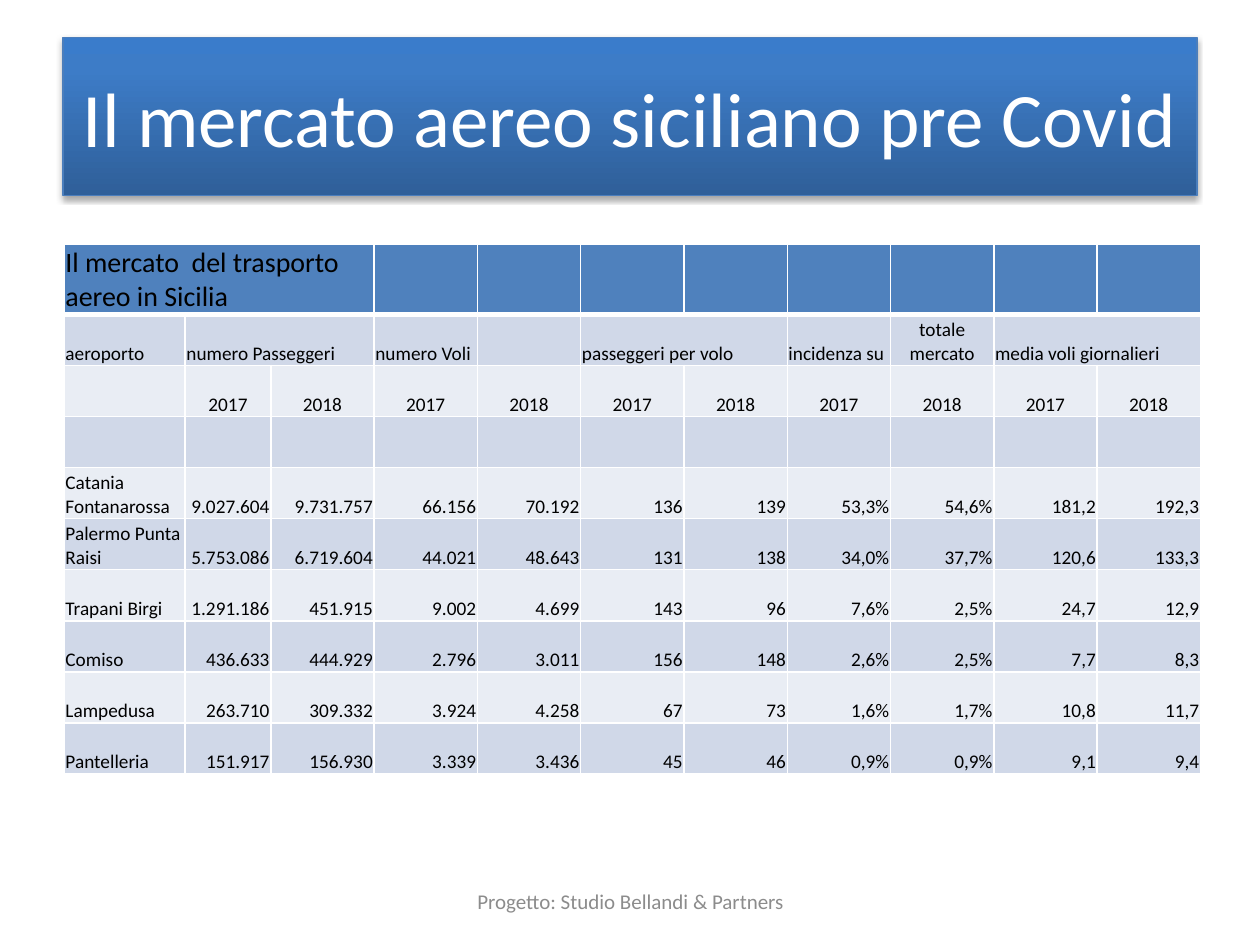
"""Build a slide with a table of Sicilian air traffic before Covid."""
from lxml.etree import SubElement
from pptx import Presentation
from pptx.dml.color import RGBColor
from pptx.enum.shapes import MSO_SHAPE as Shape
from pptx.enum.text import MSO_ANCHOR as Anchor, PP_ALIGN as Align
from pptx.oxml.ns import qn
from pptx.util import Inches, Pt

TITLE = "Il mercato aereo siciliano pre Covid"
FOOTER = "Progetto: Studio Bellandi & Partners"
TABLE_TITLE = "Il mercato  del trasporto aereo in Sicilia"
HEADINGS = ["aeroporto", "numero Passeggeri", "", "numero Voli", "", "passeggeri per volo", "",
            "incidenza su", "totale mercato", "media voli giornalieri", ""]
YEARS = ["2017", "2018"]
AIRPORTS = [
    ["Catania Fontanarossa", "9.027.604", "9.731.757", "66.156", "70.192",
     "136", "139", "53,3%", "54,6%", "181,2", "192,3"],
    ["Palermo Punta Raisi", "5.753.086", "6.719.604", "44.021", "48.643",
     "131", "138", "34,0%", "37,7%", "120,6", "133,3"],
    ["Trapani Birgi", "1.291.186", "451.915", "9.002", "4.699",
     "143", "96", "7,6%", "2,5%", "24,7", "12,9"],
    ["Comiso", "436.633", "444.929", "2.796", "3.011",
     "156", "148", "2,6%", "2,5%", "7,7", "8,3"],
    ["Lampedusa", "263.710", "309.332", "3.924", "4.258",
     "67", "73", "1,6%", "1,7%", "10,8", "11,7"],
    ["Pantelleria", "151.917", "156.930", "3.339", "3.436",
     "45", "46", "0,9%", "0,9%", "9,1", "9,4"],
]
COLUMNS = len(HEADINGS)
ROWS = [[TABLE_TITLE] + [""] * (COLUMNS - 1), HEADINGS, [""] + YEARS * 5, [""] * COLUMNS, *AIRPORTS]
MERGES = [(0, 0, 2), (1, 1, 2), (1, 5, 6), (1, 9, 10)]
WIDTHS = [0.96, 0.68] + [0.82] * 9
TABLE_HEIGHT, HEADER_HEIGHT = 4.19, 0.54

FONT = "Calibri"
WHITE = RGBColor(0xFF, 0xFF, 0xFF)
BLACK = RGBColor(0x00, 0x00, 0x00)
GRAY = RGBColor(0x8C, 0x8C, 0x8C)
OUTLINE = RGBColor(0x4B, 0x7E, 0xBC)
HEADER_FILL = RGBColor(0x4F, 0x81, 0xBD)
BANDS = [RGBColor(0xE9, 0xED, 0xF4), RGBColor(0xD0, 0xD8, 0xE8)]
GRADIENT = [(0, RGBColor(0x2F, 0x5F, 0x99)), (80, RGBColor(0x3D, 0x7C, 0xC7)),
            (100, RGBColor(0x3A, 0x7C, 0xCB))]


def write(frame, text, size=11, color=BLACK, align=Align.LEFT, anchor=Anchor.MIDDLE):
    frame.word_wrap = True
    frame.vertical_anchor = anchor
    para = frame.paragraphs[0]
    para.alignment = align
    span = para.add_run()
    span.text = text
    span.font.name = FONT
    span.font.size = Pt(size)
    span.font.color.rgb = color


def add_color(parent, color):
    return SubElement(parent, qn("a:srgbClr"), val=str(color))


def add_title(page):
    box = page.shapes.add_shape(Shape.RECTANGLE, Inches(0.5), Inches(0.3), Inches(9), Inches(1.25))
    box.line.color.rgb = OUTLINE
    box.line.width = Pt(0.75)
    box.fill.gradient()
    box.fill.gradient_angle = 90
    stops = box._element.spPr.find(".//" + qn("a:gsLst"))
    stops.clear()
    for position, color in GRADIENT:
        add_color(SubElement(stops, qn("a:gs"), pos=str(position * 1000)), color)
    box.shadow.inherit = False
    effects = box._element.spPr.find(qn("a:effectLst"))
    shadow = SubElement(effects, qn("a:outerShdw"), blurRad=str(Pt(3.1)), dist=str(Pt(1.8)),
                        dir="5400000", rotWithShape="0")
    SubElement(add_color(shadow, BLACK), qn("a:alpha"), val="35000")
    write(box.text_frame, TITLE, size=44, color=WHITE, align=Align.CENTER)


def add_borders(cell, row):
    properties = cell._tc.get_or_add_tcPr()
    widths = {"L": 1, "R": 1, "T": 3 if row == 1 else 1, "B": 3 if row == 0 else 1}
    for side, width in widths.items():
        line = SubElement(properties, qn(f"a:ln{side}"), w=str(Pt(width)))
        add_color(SubElement(line, qn("a:solidFill")), WHITE)


def cell_align(row, column):
    if row == 2 or (row, column) == (1, 8):
        return Align.CENTER
    return Align.RIGHT if row > 3 and column > 0 else Align.LEFT


def add_traffic_table(page):
    table = page.shapes.add_table(len(ROWS), COLUMNS, Inches(0.51), Inches(1.94),
                                  Inches(9), Inches(TABLE_HEIGHT)).table
    for column, width in zip(table.columns, WIDTHS):
        column.width = Inches(width)
    body_height = (TABLE_HEIGHT - HEADER_HEIGHT) / (len(ROWS) - 1)
    for row, texts in enumerate(ROWS):
        table.rows[row].height = Inches(body_height if row else HEADER_HEIGHT)
        for column, text in enumerate(texts):
            cell = table.cell(row, column)
            add_borders(cell, row)
            cell.fill.solid()
            cell.fill.fore_color.rgb = BANDS[row % 2] if row else HEADER_FILL
            cell.margin_left = cell.margin_right = cell.margin_top = Inches(0.01)
            cell.margin_bottom = 0
            cell.vertical_anchor = Anchor.BOTTOM
            if text:
                write(cell.text_frame, text, size=11 if row else 16,
                      align=cell_align(row, column), anchor=None)
    for row, first, last in MERGES:
        table.cell(row, first).merge(table.cell(row, last))


def main():
    deck = Presentation()
    deck.slide_width, deck.slide_height = Inches(10), Inches(7.5)
    page = deck.slides.add_slide(deck.slide_layouts[6])
    add_title(page)
    add_traffic_table(page)
    footer = page.shapes.add_textbox(Inches(3.42), Inches(6.95), Inches(3.17), Inches(0.4))
    write(footer.text_frame, FOOTER, size=12, color=GRAY, align=Align.CENTER)
    deck.save("out.pptx")


if __name__ == "__main__":
    main()
